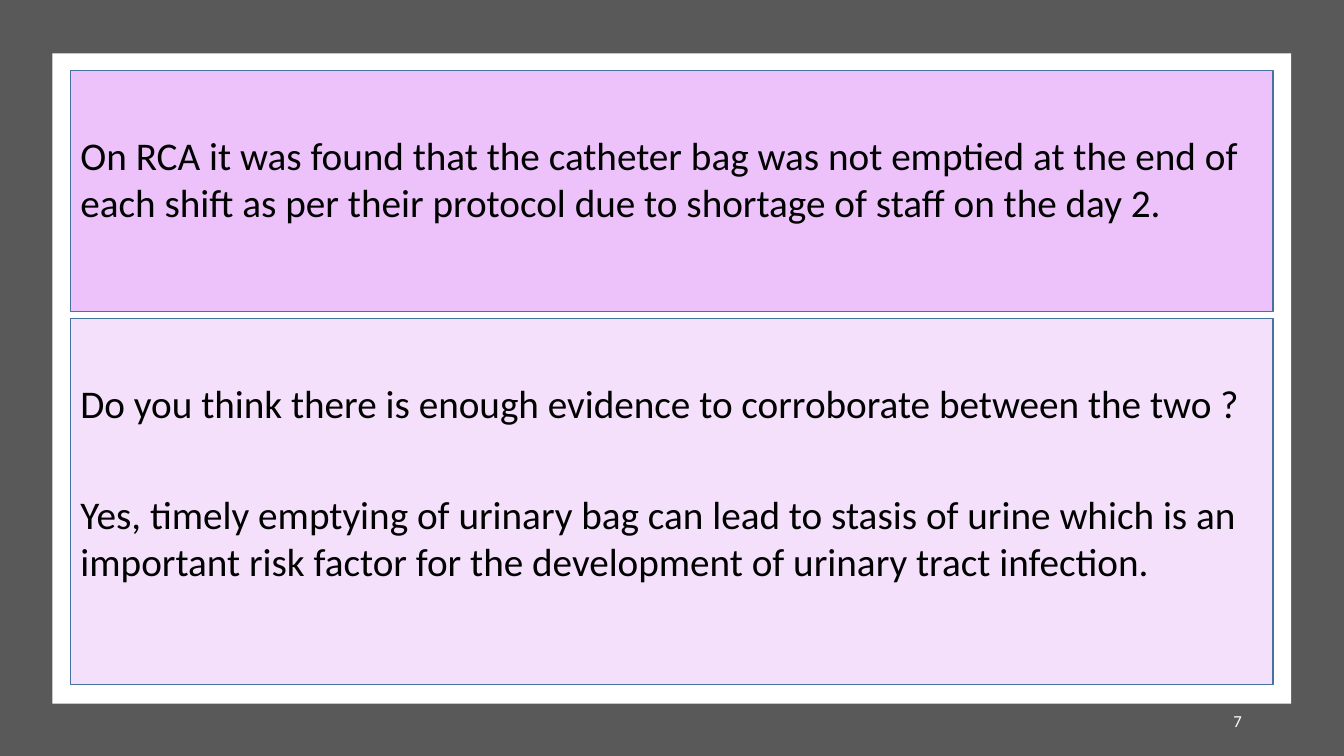
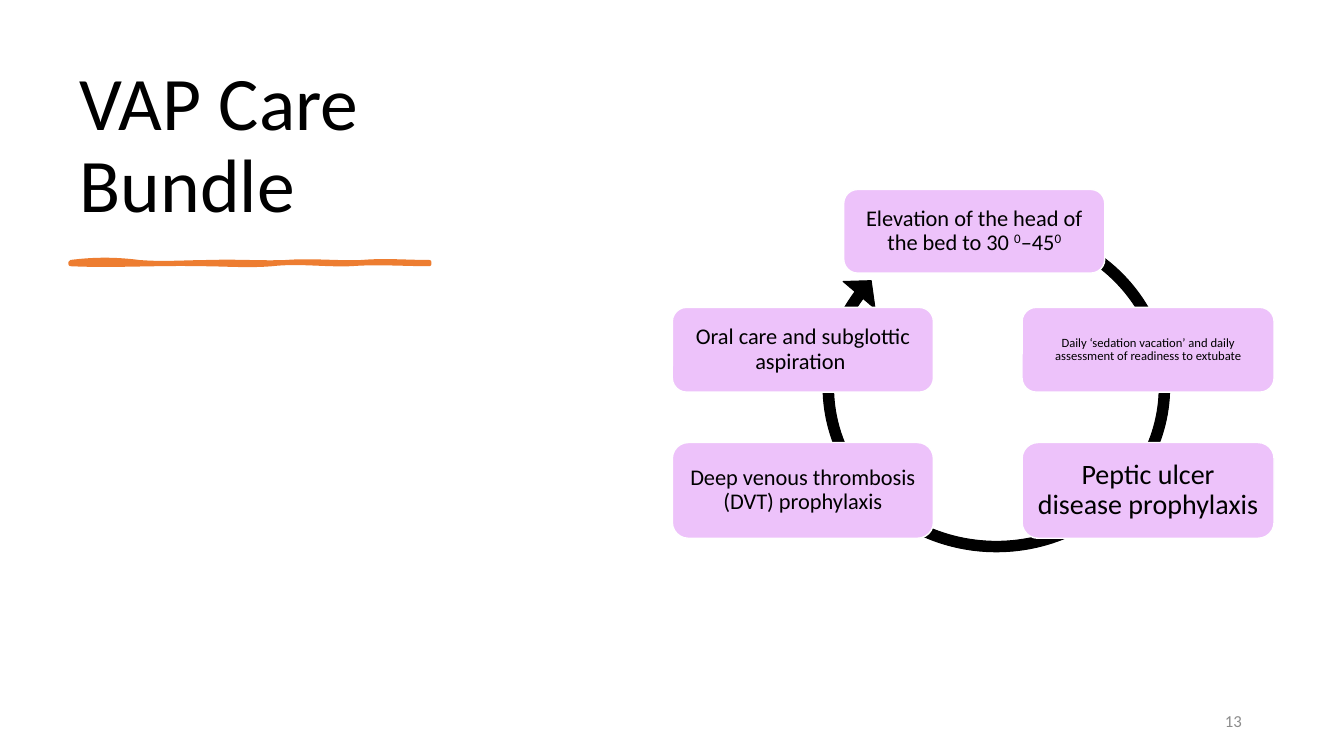
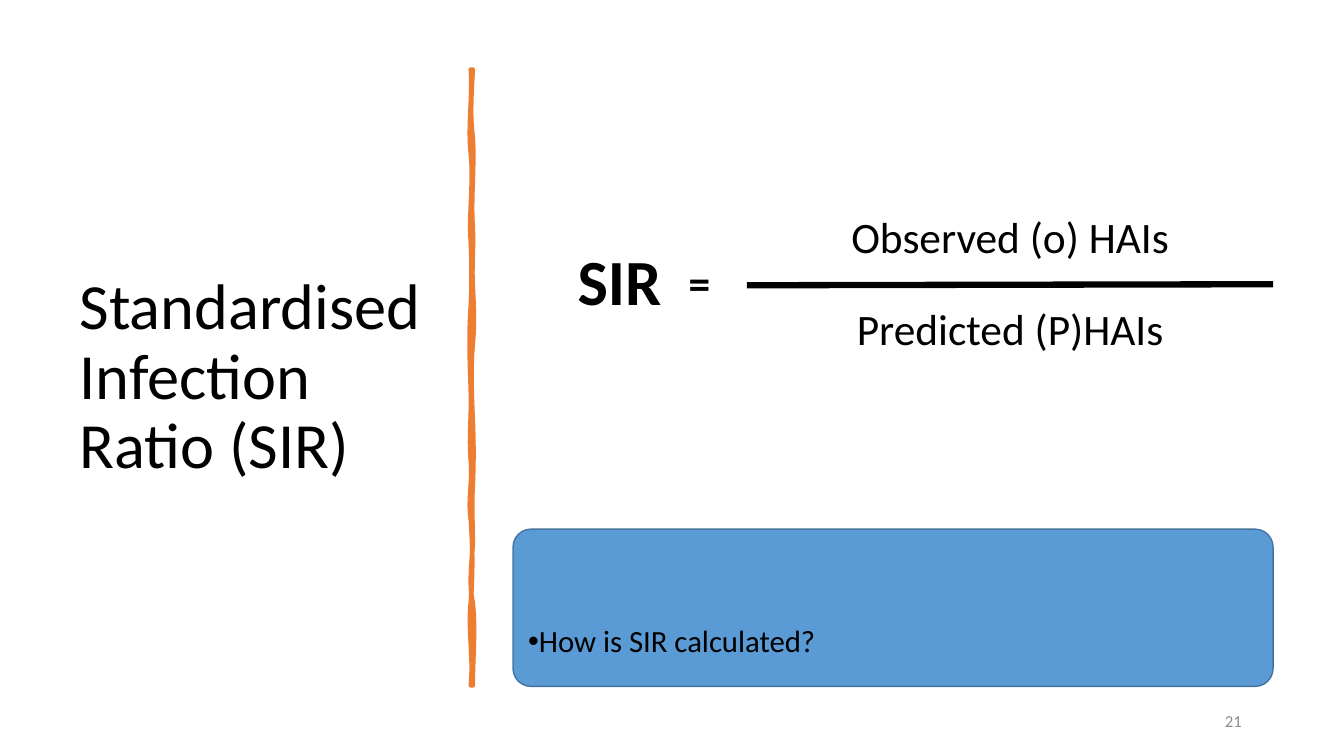
"""Build three infection-control slides: RCA finding, VAP care bundle and SIR."""
from typing import NamedTuple

from lxml import etree
from pptx import Presentation
from pptx import util as u
from pptx.dml.color import RGBColor
from pptx.enum import shapes, text
from pptx.oxml.ns import qn

FONT = "Calibri"
BLACK, WHITE, GREY, DARK = "000000", "FFFFFF", "8C8C8C", "595959"
LILAC, PALE_LILAC = "EDC2FA", "F5E0FC"
BLUE, BLUE_EDGE, ORANGE = "5B9BD5", "43739E", "ED7D31"
WIDTH, HEIGHT = 40 / 3, 7.5
LEFT, RIGHT = 0.7, 12.63
TITLE_ONLY, BLANK = 5, 6
RECT, ROUND = shapes.MSO_SHAPE.RECTANGLE, shapes.MSO_SHAPE.ROUNDED_RECTANGLE
TOP, MIDDLE, BOTTOM = text.MSO_ANCHOR.TOP, text.MSO_ANCHOR.MIDDLE, text.MSO_ANCHOR.BOTTOM
ALIGN = text.PP_ALIGN


class Box(NamedTuple):
    left: float
    top: float
    width: float
    height: float

    def lengths(self) -> list:
        return [u.Inches(v) for v in self]


class Style(NamedTuple):
    size: float
    color: str = BLACK
    align: int = ALIGN.LEFT
    anchor: int = MIDDLE
    spacing: float = 0.9
    after: float = 6
    bold: bool = False


class Panel(NamedTuple):
    box: Box
    fill: str
    paragraphs: list


class Step(NamedTuple):
    box: Box
    size: float
    runs: list


class Term(NamedTuple):
    box: Box
    words: str
    size: float
    bold: bool = False


class Bend(NamedTuple):
    """Stretch of a brush edge up to end, with its two sideways pulls."""
    end: float
    first: float
    second: float


PANEL_TEXT = Style(28, anchor=TOP, spacing=1, after=46)
PANELS = [
    Panel(Box(LEFT, 0.7, 11.93, 2.39), LILAC, [
        "On RCA it was found that the catheter bag was not emptied at the end of "
        "each shift as per their protocol due to shortage of staff on the day 2."]),
    Panel(Box(LEFT, 3.16, 11.93, 3.63), PALE_LILAC, [
        "Do you think there is enough evidence to corroborate between the two ?",
        "Yes, timely emptying of urinary bag can lead to stasis of urine which is an "
        "important risk factor for the development of urinary tract infection."]),
]

STEPS = [
    Step(Box(8.37, 1.88, 2.59, 0.83), 16,
         ["Elevation of the head of the bed to 30 ", "0", "–45", "0"]),
    Step(Box(10.14, 3.05, 2.5, 0.84), 9,
         ["Daily ‘sedation vacation’ and daily assessment of readiness to extubate"]),
    Step(Box(10.14, 4.39, 2.5, 0.95), 20, ["Peptic ulcer disease prophylaxis"]),
    Step(Box(6.67, 4.39, 2.59, 0.95), 16, ["Deep venous thrombosis (DVT) prophylaxis"]),
    Step(Box(6.67, 3.05, 2.59, 0.84), 16, ["Oral care and subglottic aspiration "]),
]
CYCLE_ADJUSTMENTS = [0.029, 3.907, 128.302, 180.076, 0.058]

TERMS = [
    Term(Box(5.09, 2.42, 2.11, 0.81), "SIR", 46, True),
    Term(Box(6.67, 2.53, 0.54, 0.61), "=", 31, True),
    Term(Box(7.41, 2.07, 5.22, 0.61), "Observed (o) HAIs", 31),
    Term(Box(7.41, 2.98, 5.22, 0.61), "Predicted (P)HAIs", 31),
]

UNDERLINE = (
    [Bend(1.38, -0.03, -0.03), Bend(2.09, 0.02, 0), Bend(2.84, -0.01, 0.01),
     Bend(3.59, -0.02, 0.01), Bend(4.26, -0.02, 0)],
    [Bend(3.48, 0, -0.02), Bend(2.7, 0.01, -0.03), Bend(1.99, 0.02, 0),
     Bend(0.7, -0.01, 0.02)],
)
DIVIDER = (
    [Bend(1.52, 0.02, -0.03), Bend(2.4, 0.03, -0.02), Bend(3.04, 0.01, 0.01),
     Bend(3.87, -0.02, -0.01), Bend(4.57, 0.01, -0.02), Bend(5.15, 0.02, -0.03),
     Bend(5.98, 0.02, 0.02), Bend(6.8, -0.03, 0.03)],
    [Bend(5.98, 0, 0.03), Bend(5.4, -0.04, -0.01), Bend(4.82, 0, -0.01),
     Bend(4.17, 0.01, 0.01), Bend(3.41, -0.01, -0.02), Bend(2.83, 0.02, 0.01),
     Bend(2.25, -0.01, 0.01), Bend(1.36, -0.02, 0.02), Bend(0.69, -0.03, -0.01)],
)


def rgb(color: str) -> RGBColor:
    return RGBColor.from_string(color)


def paint(sp, fill: str, line: str | None = None, width: float = 1) -> None:
    sp.shadow.inherit = False
    sp.fill.solid()
    sp.fill.fore_color.rgb = rgb(fill)
    if line is None:
        sp.line.fill.background()
    else:
        sp.line.color.rgb = rgb(line)
        sp.line.width = u.Pt(width)


def add_shape(s, kind: int, box: Box, fill: str, line: str | None = None, width: float = 1):
    sp = s.shapes.add_shape(kind, *box.lengths())
    paint(sp, fill, line, width)
    return sp


def write(sp, paragraphs: list, style: Style, side: float = 0.1,
          top: float = 0.05, bottom: float = 0.05) -> None:
    """Fill a frame; a list in place of a string holds alternating superscript runs."""
    tf = sp.text_frame
    tf.word_wrap = True
    tf.auto_size = text.MSO_AUTO_SIZE.NONE
    tf.vertical_anchor = style.anchor
    tf.margin_left = tf.margin_right = u.Inches(side)
    tf.margin_top, tf.margin_bottom = u.Inches(top), u.Inches(bottom)
    for i, runs in enumerate(paragraphs):
        p = tf.add_paragraph() if i else tf.paragraphs[0]
        p.alignment, p.line_spacing = style.align, style.spacing
        p.space_before, p.space_after = u.Pt(0), u.Pt(style.after)
        p.font.name, p.font.size, p.font.bold = FONT, u.Pt(style.size), style.bold
        p.font.color.rgb = rgb(style.color)
        for j, words in enumerate([runs] if isinstance(runs, str) else runs):
            r = p.add_run()
            r.text = words
            if j % 2:
                r.font._element.set("baseline", "30000")


def add_text(s, box: Box, words: str, style: Style) -> None:
    write(s.shapes.add_textbox(*box.lengths()), [words], style)


def add_slide(prs, number: int, number_color: str = GREY, layout: int = TITLE_ONLY):
    s = prs.slides.add_slide(prs.slide_layouts[layout])
    if layout == BLANK:
        add_shape(s, RECT, Box(0, 0, WIDTH, HEIGHT), DARK)
        add_shape(s, RECT, Box(0.52, 0.53, 12.29, 6.45), WHITE)
    add_text(s, Box(9.42, 6.95, 3, 0.4), str(number), Style(12, number_color, ALIGN.RIGHT, spacing=1))
    return s


def set_title(s, box: Box, words: str, size: float, anchor: int) -> None:
    sp = s.shapes.title
    sp.left, sp.top, sp.width, sp.height = box.lengths()
    write(sp, [words], Style(size, anchor=anchor, after=0))


def edge_curves(start: float, base: float, bends: list[Bend]) -> list:
    """Give each bend as two control points and an end point."""
    curves = []
    for bend in bends:
        third = (bend.end - start) / 3
        curves.append([(start + third, base + bend.first),
                       (bend.end - third, base + bend.second), (bend.end, base)])
        start = bend.end
    return curves


def add_brush(s, edges: tuple, base: float, width: float, vertical: bool = False) -> None:
    """Draw a hand-painted stroke from its outward and returning edges."""
    outward, back = edges
    start, turn, far = back[-1].end, outward[-1].end, base + 0.02

    def place(point: tuple) -> tuple:
        x, y = (u.Inches(v) for v in point)
        return (y, x) if vertical else (x, y)

    curves = edge_curves(start, base, outward) + [None] + edge_curves(turn, far, back)
    ends = [place(curve[-1] if curve else (turn, far)) for curve in curves]
    builder = s.shapes.build_freeform(*place((start, base)))
    builder.add_line_segments(ends, close=True)
    sp = builder.convert_to_shape()
    for line, curve in zip(list(sp._element.iter(qn("a:lnTo"))), curves):
        if curve:
            bezier = etree.Element(qn("a:cubicBezTo"))
            for x, y in map(place, curve):
                etree.SubElement(bezier, qn("a:pt"), x=str(x - sp.left), y=str(y - sp.top))
            line.getparent().replace(line, bezier)
    paint(sp, ORANGE, ORANGE, width)


def add_bullet(p) -> None:
    defaults = p._p.pPr.find(qn("a:defRPr"))
    defaults.addprevious(etree.Element(qn("a:buFont"), typeface="Arial"))
    defaults.addprevious(etree.Element(qn("a:buChar"), char="•"))


def build_finding(prs) -> None:
    s = add_slide(prs, 7, WHITE, BLANK)
    for panel in PANELS:
        sp = add_shape(s, RECT, panel.box, panel.fill, BLUE_EDGE)
        write(sp, panel.paragraphs, PANEL_TEXT, top=0.6)


def build_bundle(prs) -> None:
    s = add_slide(prs, 13)
    set_title(s, Box(0.69, 0.7, 5.27, 1.62), "VAP Care Bundle", 54, BOTTOM)
    add_brush(s, UNDERLINE, 2.6, 3)
    cycle = add_shape(s, shapes.MSO_SHAPE.CIRCULAR_ARROW, Box(8.01, 2.05, 3.75, 3.58),
                      BLACK, BLACK, 0.75)
    for i, value in enumerate(CYCLE_ADJUSTMENTS):
        cycle.adjustments[i] = value
    for step in STEPS:
        sp = add_shape(s, ROUND, step.box, LILAC, WHITE)
        write(sp, [step.runs], Style(step.size, align=ALIGN.CENTER, after=0), top=0.1, bottom=0.1)


def build_ratio(prs) -> None:
    s = add_slide(prs, 21)
    set_title(s, Box(0.69, 0.7, 3.74, 6.11), "Standardised Infection Ratio (SIR)", 46, MIDDLE)
    add_brush(s, DIVIDER, 4.67, 3.25, vertical=True)
    question = add_shape(s, ROUND, Box(5.09, 5.25, 7.54, 1.56), BLUE, BLUE_EDGE)
    question.adjustments[0] = 0.114
    write(question, ["How is SIR calculated?"], Style(22, anchor=TOP), top=0.91)
    add_bullet(question.text_frame.paragraphs[0])
    for term in TERMS:
        add_text(s, term.box, term.words, Style(term.size, align=ALIGN.CENTER, bold=term.bold))
    bar = s.shapes.add_connector(shapes.MSO_CONNECTOR.STRAIGHT, u.Inches(7.41), u.Inches(2.83),
                                 u.Inches(RIGHT), u.Inches(2.82))
    bar.line.color.rgb = rgb(BLACK)
    bar.line.width = u.Pt(4.5)
    etree.SubElement(bar._element.spPr, qn("a:effectLst"))


def main() -> None:
    prs = Presentation()
    prs.slide_width, prs.slide_height = u.Inches(WIDTH), u.Inches(HEIGHT)
    build_finding(prs)
    build_bundle(prs)
    build_ratio(prs)
    prs.save("out.pptx")


if __name__ == "__main__":
    main()
